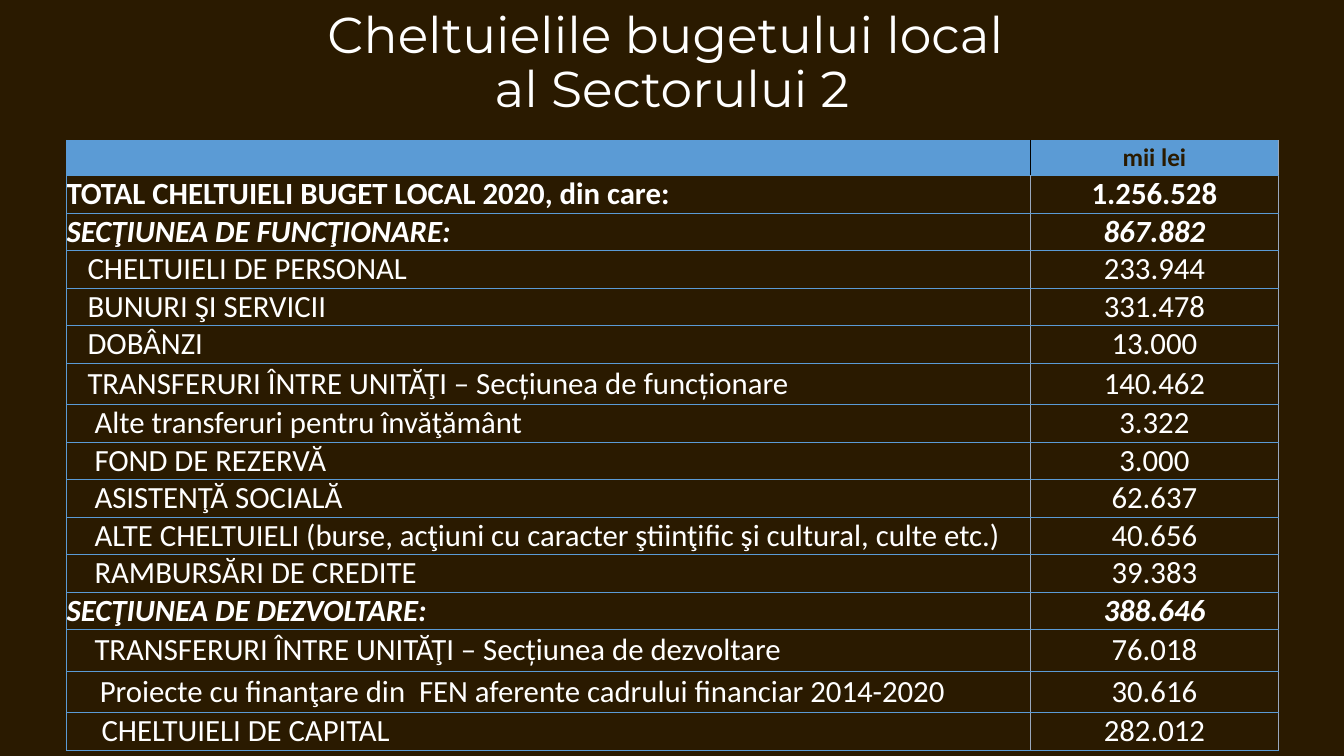
from lxml.etree import SubElement
from pptx import Presentation
from pptx.dml.color import RGBColor
from pptx.enum.text import MSO_ANCHOR, PP_ALIGN
from pptx.oxml.ns import qn
from pptx.util import Inches, Pt

BROWN = RGBColor(0x2A, 0x1A, 0x00)
WHITE = RGBColor(0xFF, 0xFF, 0xFF)
BLUE = RGBColor(0x5B, 0x9B, 0xD5)
GREY = RGBColor(0x99, 0xA8, 0xBD)
BLACK = RGBColor(0x00, 0x00, 0x00)

PLAIN, TOTAL, SECTION = (False, False), (True, False), (True, True)
LINE, TALL_LINE = 4.96, 5.5
EXPENSES = [
    ("TOTAL CHELTUIELI BUGET LOCAL 2020, din care:", "1.256.528", 0, TOTAL, LINE),
    ("SECŢIUNEA DE FUNCŢIONARE:", "867.882", 0, SECTION, LINE),
    ("CHELTUIELI DE PERSONAL", "233.944", 3, PLAIN, LINE),
    ("BUNURI ŞI SERVICII", "331.478", 3, PLAIN, LINE),
    ("DOBÂNZI", "13.000", 3, PLAIN, LINE),
    ("TRANSFERURI ÎNTRE UNITĂŢI – Secțiunea de funcționare", "140.462", 3, PLAIN, TALL_LINE),
    ("Alte transferuri pentru învăţământ", "3.322", 4, PLAIN, LINE),
    ("FOND DE REZERVĂ", "3.000", 4, PLAIN, LINE),
    ("ASISTENŢĂ SOCIALĂ", "62.637", 4, PLAIN, LINE),
    ("ALTE CHELTUIELI (burse, acţiuni cu caracter ştiinţific şi cultural, culte etc.)",
     "40.656", 4, PLAIN, LINE),
    ("RAMBURSĂRI DE CREDITE", "39.383", 4, PLAIN, LINE),
    ("SECŢIUNEA DE DEZVOLTARE:", "388.646", 0, SECTION, LINE),
    ("TRANSFERURI ÎNTRE UNITĂŢI – Secțiunea de dezvoltare", "76.018", 4, PLAIN, TALL_LINE),
    ("Proiecte cu finanţare din  FEN aferente cadrului financiar 2014-2020",
     "30.616", 4.75, PLAIN, TALL_LINE),
    ("CHELTUIELI DE CAPITAL", "282.012", 5, PLAIN, LINE),
]


class BudgetSlide:
    """Builds one slide, with lengths in percent of its width and height."""

    def __init__(self):
        self.deck = Presentation()
        self.deck.slide_width, self.deck.slide_height = Inches(13.33), Inches(7.5)
        self.slide = self.deck.slides.add_slide(self.deck.slide_layouts[5])
        self.slide.background.fill.solid()
        self.slide.background.fill.fore_color.rgb = BROWN

    def across(self, percent):
        return round(self.deck.slide_width * percent / 100)

    def down(self, percent):
        return round(self.deck.slide_height * percent / 100)

    def style(self, paragraph, font_name, size, color, align, bold=False, italic=False):
        paragraph.alignment = align
        font = paragraph.font
        font.name, font.size, font.bold, font.italic = font_name, Pt(size), bold, italic
        font.color.rgb = color

    def title(self, wording, top, height):
        heading = self.slide.shapes.title
        heading.left, heading.top = 0, self.down(top)
        heading.width, heading.height = self.deck.slide_width, self.down(height)
        heading.text_frame.text = wording
        heading.text_frame.vertical_anchor = MSO_ANCHOR.MIDDLE
        line = heading.text_frame.paragraphs[0]
        line.line_spacing = 0.9
        self.style(line, "Montserrat", 36, WHITE, PP_ALIGN.CENTER)

    def table(self, left, top, widths, heights):
        frame = self.slide.shapes.add_table(
            len(heights), len(widths), self.across(left), self.down(top),
            self.across(sum(widths)), self.down(sum(heights)))
        grid = frame.table
        grid.first_row = grid.horz_banding = False
        for column, width in zip(grid.columns, widths):
            column.width = self.across(width)
        for row, height in zip(grid.rows, heights):
            row.height = self.down(height)
        return grid

    def borders(self, cell, left, right):
        properties = cell._tc.get_or_add_tcPr()
        edges = {"L": left, "R": right, "T": BLUE, "B": BLUE}
        for side, color in edges.items():
            weight = Pt(0.5) if color == BLUE else Pt(1)
            edge = SubElement(properties, qn(f"a:ln{side}"), w=str(weight))
            SubElement(SubElement(edge, qn("a:solidFill")), qn("a:srgbClr"), val=str(color))

    def cell(self, cell, wording, size, color, align, divider, is_first,
             fill=None, indent=0, emphasis=PLAIN):
        self.borders(cell, BLUE if is_first else divider, divider if is_first else GREY)
        if fill is None:
            cell.fill.background()
        else:
            cell.fill.solid()
            cell.fill.fore_color.rgb = fill
        cell.margin_left = Pt(5 * indent)
        cell.margin_right = cell.margin_top = cell.margin_bottom = 0
        cell.vertical_anchor = MSO_ANCHOR.MIDDLE
        cell.text = wording
        self.style(cell.text_frame.paragraphs[0], "Calibri", size, color, align, *emphasis)


def main():
    budget = BudgetSlide()
    budget.title("Cheltuielile bugetului local \val Sectorului 2", 1.33, 14.4)
    heights = [4.67] + [expense[-1] for expense in EXPENSES]
    spending = budget.table(4.95, 18.53, [71.72, 18.45], heights)
    for column, heading in enumerate(["", "mii lei"]):
        budget.cell(spending.cell(0, column), heading, 18, BROWN, PP_ALIGN.CENTER,
                    BLACK, column == 0, fill=BLUE, emphasis=TOTAL)
    for row, (label, amount, indent, emphasis, _) in enumerate(EXPENSES, start=1):
        budget.cell(spending.cell(row, 0), label, 22, WHITE, PP_ALIGN.LEFT,
                    GREY, True, indent=indent, emphasis=emphasis)
        budget.cell(spending.cell(row, 1), amount, 22, WHITE, PP_ALIGN.CENTER,
                    GREY, False, emphasis=emphasis)
    budget.deck.save("out.pptx")


if __name__ == "__main__":
    main()
